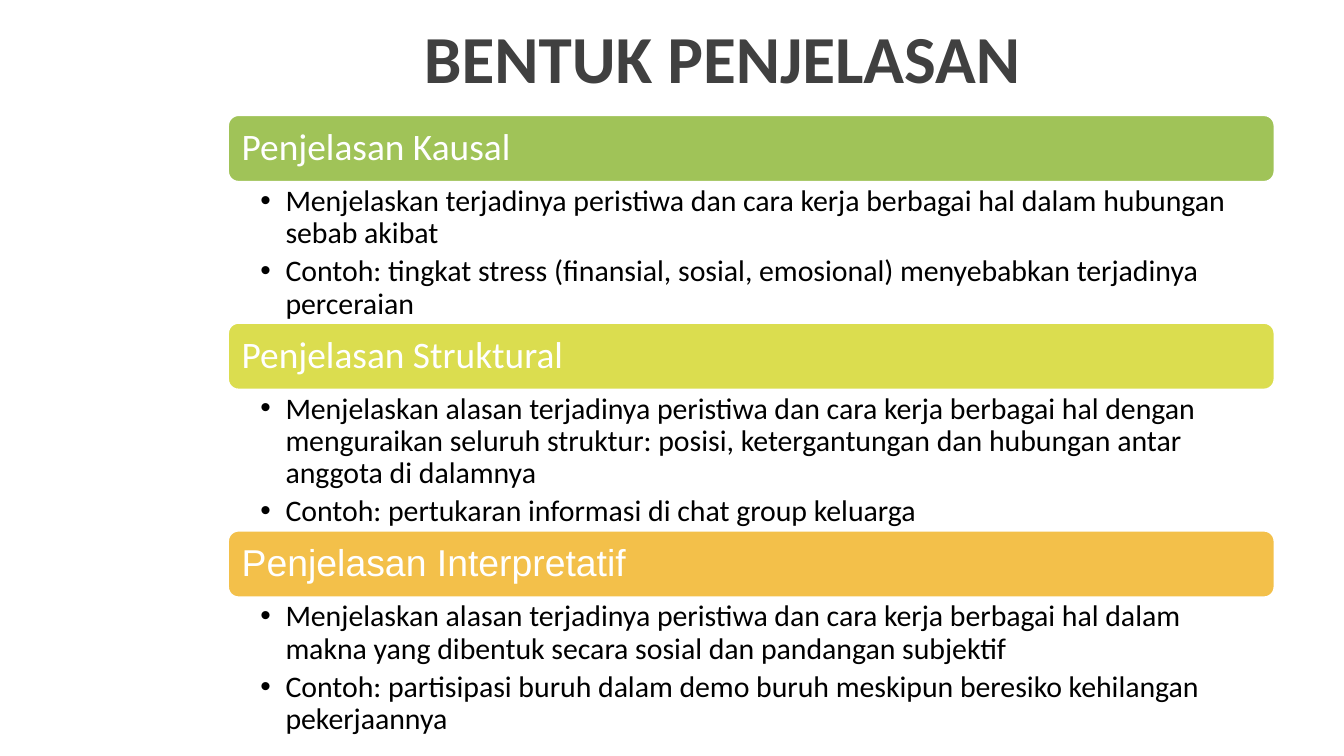
from lxml.etree import SubElement
from pptx import Presentation
from pptx.dml.color import RGBColor
from pptx.enum.shapes import MSO_SHAPE
from pptx.enum.text import MSO_ANCHOR, MSO_AUTO_SIZE, PP_ALIGN
from pptx.oxml.ns import qn
from pptx.util import Pt

WHITE = RGBColor(0xFF, 0xFF, 0xFF)
BLACK = RGBColor(0x00, 0x00, 0x00)
GREY = RGBColor(0x40, 0x40, 0x40)
GREEN = RGBColor(0xA0, 0xC3, 0x58)
LIME = RGBColor(0xDB, 0xDD, 0x4F)
AMBER = RGBColor(0xF3, 0xC0, 0x4A)

LEFT, TOP, WIDTH = 121.7, 61.2, 561.6
HEADING_HEIGHT, POINTS_HEIGHT = 36.7, 74.6
PITCH = HEADING_HEIGHT + POINTS_HEIGHT

explanations = [
    ("Penjelasan Kausal", "Calibri", GREEN, [
        "Menjelaskan terjadinya peristiwa dan cara kerja berbagai hal dalam hubungan sebab akibat",
        "Contoh: tingkat stress (finansial, sosial, emosional) menyebabkan terjadinya perceraian",
    ]),
    ("Penjelasan Struktural", "Calibri", LIME, [
        "Menjelaskan alasan terjadinya peristiwa dan cara kerja berbagai hal dengan "
        "menguraikan seluruh struktur: posisi, ketergantungan dan hubungan antar anggota di dalamnya",
        "Contoh: pertukaran informasi di chat group keluarga",
    ]),
    ("Penjelasan Interpretatif", "Arial", AMBER, [
        "Menjelaskan alasan terjadinya peristiwa dan cara kerja berbagai hal dalam "
        "makna yang dibentuk secara sosial dan pandangan subjektif",
        "Contoh: partisipasi buruh dalam demo buruh meskipun beresiko kehilangan pekerjaannya",
    ]),
]


def add_run(paragraph, text, font_name, size, color, bold=False):
    run = paragraph.add_run()
    run.text = text
    run.font.name = font_name
    run.font.size = Pt(size)
    run.font.color.rgb = color
    run.font.bold = bold


def set_frame(frame, left, top, right, bottom, anchor):
    frame.margin_left, frame.margin_top = Pt(left), Pt(top)
    frame.margin_right, frame.margin_bottom = Pt(right), Pt(bottom)
    frame.vertical_anchor = anchor
    frame.word_wrap = True
    frame.auto_size = MSO_AUTO_SIZE.NONE


prs = Presentation()
prs.slide_width, prs.slide_height = Pt(720), Pt(405)
slide = prs.slides.add_slide(prs.slide_layouts[5])

title = slide.shapes.title
title.left, title.top, title.width, title.height = Pt(87.8), Pt(0), Pt(598.3), Pt(61.2)
set_frame(title.text_frame, 7.2, 3.6, 7.2, 3.6, MSO_ANCHOR.MIDDLE)
title_line = title.text_frame.paragraphs[0]
title_line.alignment = PP_ALIGN.CENTER
add_run(title_line, "BENTUK PENJELASAN", "Calibri", 36, GREY, bold=True)

for index, (name, font_name, color, sentences) in enumerate(explanations):
    top = TOP + index * PITCH

    heading = slide.shapes.add_shape(
        MSO_SHAPE.ROUNDED_RECTANGLE, Pt(LEFT), Pt(top), Pt(WIDTH), Pt(HEADING_HEIGHT))
    heading.shadow.inherit = False
    heading.fill.solid()
    heading.fill.fore_color.rgb = color
    heading.line.color.rgb = WHITE
    heading.line.width = Pt(2)
    set_frame(heading.text_frame, 6, 6, 6, 6, MSO_ANCHOR.MIDDLE)
    heading_line = heading.text_frame.paragraphs[0]
    heading_line.alignment = PP_ALIGN.LEFT
    heading_line.line_spacing = 0.9
    add_run(heading_line, name, font_name, 20, WHITE)

    points = slide.shapes.add_textbox(
        Pt(LEFT), Pt(top + HEADING_HEIGHT), Pt(WIDTH), Pt(POINTS_HEIGHT))
    set_frame(points.text_frame, 17.8, 1.6, 8.9, 1.6, MSO_ANCHOR.TOP)
    for number, sentence in enumerate(sentences):
        point = points.text_frame.add_paragraph() if number else points.text_frame.paragraphs[0]
        point.level = 1
        point.line_spacing = 0.9
        point.space_after = Pt(3.2)
        properties = point._p.get_or_add_pPr()
        properties.set("marL", str(Pt(13.5)))
        properties.set("indent", str(-Pt(13.5)))
        SubElement(properties, qn("a:buFont"), typeface="Arial")
        SubElement(properties, qn("a:buChar"), char="•")
        add_run(point, sentence, "Calibri", 16, BLACK)

prs.save("out.pptx")
